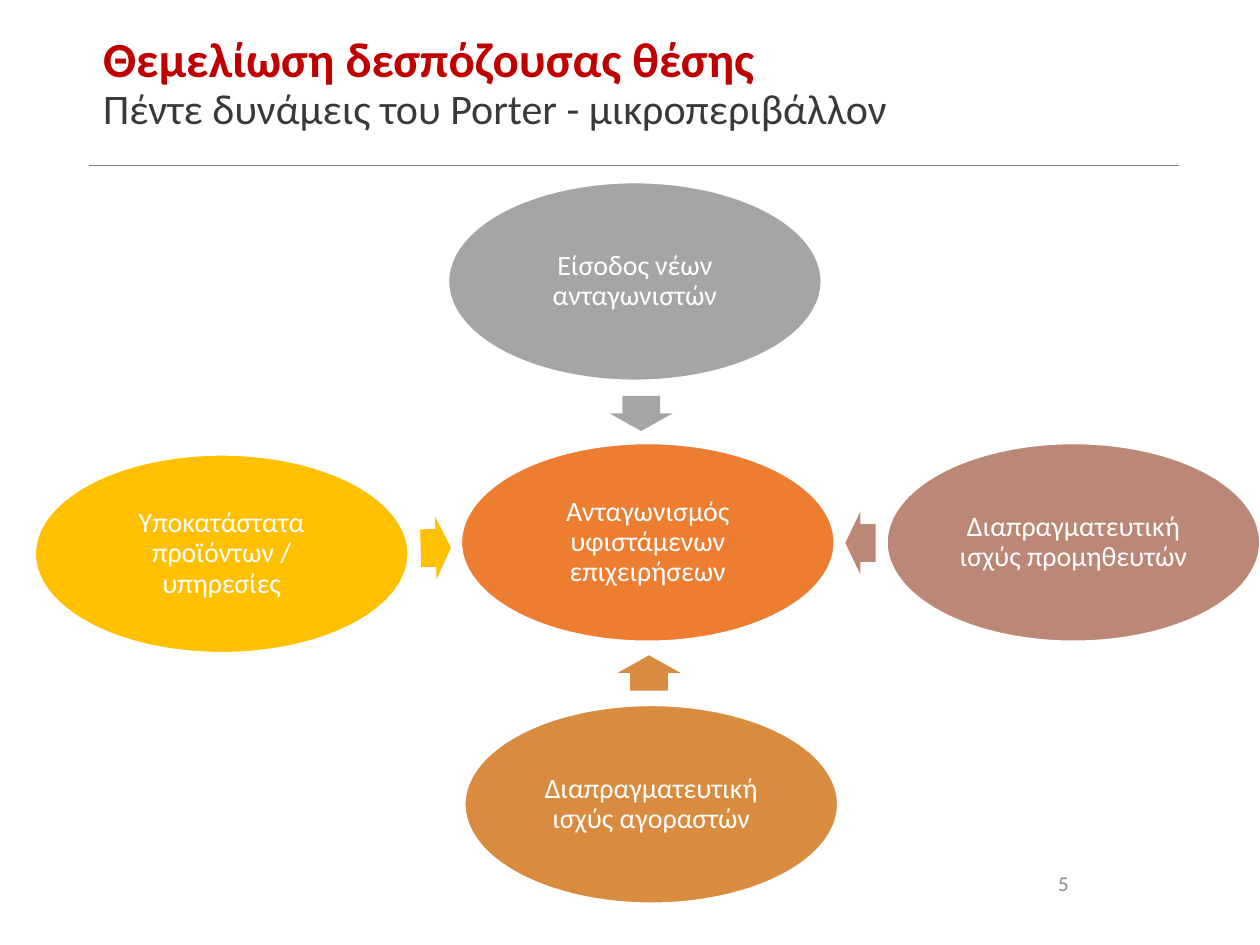
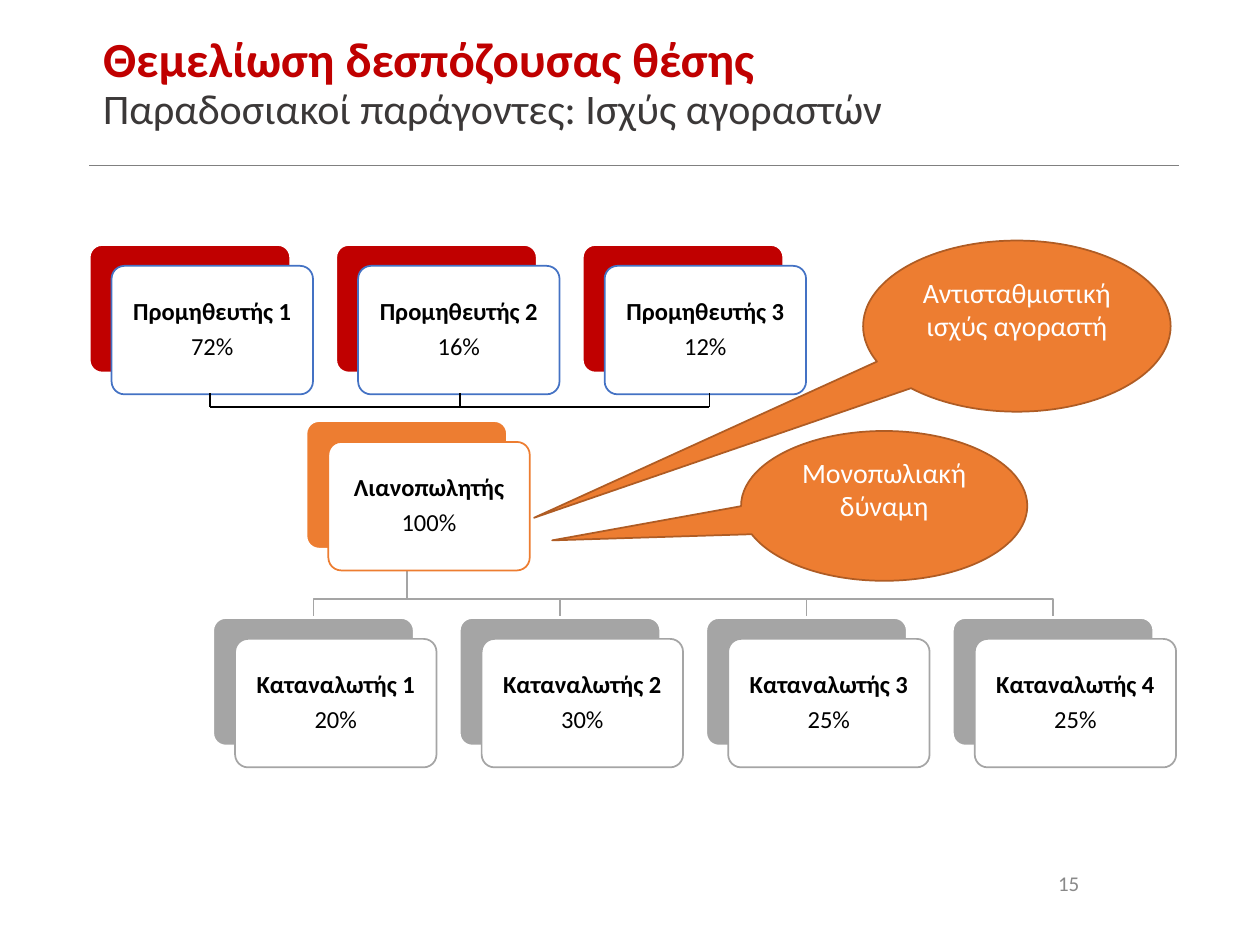
from dataclasses import dataclass
from typing import NamedTuple, Optional

from lxml.etree import SubElement
from pptx import Presentation
from pptx.dml.color import RGBColor
from pptx.enum.shapes import MSO_CONNECTOR as Connector, MSO_SHAPE as Preset
from pptx.enum.text import MSO_ANCHOR as Anchor, PP_ALIGN as Align
from pptx.oxml.ns import qn
from pptx.util import Cm, Pt


@dataclass(frozen=True)
class Theme:
    font: str = "Calibri"
    red: str = "C00000"
    dark: str = "3B3838"
    rule: str = "808080"
    number: str = "898989"
    white: str = "FFFFFF"
    black: str = "000000"
    orange: str = "ED7D31"
    orange_edge: str = "AF5C24"
    grey: str = "A5A5A5"
    blue: str = "4472C4"
    rose: str = "BB8776"
    amber: str = "D98C3F"
    yellow: str = "FFC000"
    title_size: int = 28
    subtitle_size: int = 24
    label_size: int = 16
    card_size: int = 14
    number_size: int = 12


THEME = Theme()


class Box(NamedTuple):
    """Left, top, width and height in centimetres."""
    left: float
    top: float
    width: float
    height: float

    @property
    def middle(self) -> float:
        return self.left + self.width / 2

    @property
    def bottom(self) -> float:
        return self.top + self.height


class Force(NamedTuple):
    label: str
    color: str
    left: float
    top: float
    arrow: Optional[Box] = None
    arrow_angle: float = 0


class Card(NamedTuple):
    name: str
    share: str


class CardRow(NamedTuple):
    left: float
    top: float
    back_color: str
    edge_color: str
    cards: list[Card]


class Callout(NamedTuple):
    label: str
    box: Box
    tip: tuple[float, float]


TITLE = "Θεμελίωση δεσπόζουσας θέσης"
TITLE_BOX = Box(1.83, 0.33, 21.89, 2.74)
NUMBER_BOX = Box(21.08, 17.3, 2.62, 1.02)

FORCE_WIDTH, FORCE_HEIGHT = 7.52, 3.99
FORCES = [
    Force("Ανταγωνισμός υφιστάμενων επιχειρήσεων", THEME.orange, 9.3, 8.94),
    Force("Είσοδος νέων ανταγωνιστών", THEME.grey, 9.04, 3.68,
          Box(12.57, 7.7, 0.71, 1.27), 90),
    Force("Διαπραγματευτική ισχύς προμηθευτών", THEME.rose, 17.88, 8.94,
          Box(17.04, 10.31, 0.61, 1.27), 180),
    Force("Διαπραγματευτική ισχύς αγοραστών", THEME.amber, 9.37, 14.22,
          Box(12.73, 12.93, 0.71, 1.27), 270),
    Force("Υποκατάστατα προϊόντων / υπηρεσίες", THEME.yellow, 0.71, 9.17,
          Box(8.48, 10.41, 0.61, 1.27), 358.6),
]

CARD_WIDTH, CARD_HEIGHT, CARD_STEP = 4.06, 2.59, 4.97
CARD_SHIFT_X, CARD_SHIFT_Y = 0.45, 0.43
SUPPLIERS = CardRow(1.8, 4.93, THEME.red, THEME.blue, [
    Card("Προμηθευτής 1", "72%"),
    Card("Προμηθευτής 2", "16%"),
    Card("Προμηθευτής 3", "12%"),
])
RETAILER = CardRow(6.17, 8.48, THEME.orange, THEME.orange,
                   [Card("Λιανοπωλητής", "100%")])
CONSUMERS = CardRow(4.29, 12.45, THEME.grey, THEME.grey, [
    Card("Καταναλωτής 1", "20%"),
    Card("Καταναλωτής 2", "30%"),
    Card("Καταναλωτής 3", "25%"),
    Card("Καταναλωτής 4", "25%"),
])
BRANCH_DROP = 0.38
BRACKET_Y, BRACKET_TOP = 8.2, 7.93
BRACKET_XS = [4.24 + 5.03 * index for index in range(3)]
CALLOUTS = [
    Callout("Μονοπωλιακή δύναμη", Box(14.94, 8.69, 5.77, 3.02), (-1.16, 0.23)),
    Callout("Αντισταθμιστική ισχύς αγοραστή", Box(17.4, 4.85, 6.2, 3.45), (-1.57, 1.12)),
]


def rgb(color: str) -> RGBColor:
    return RGBColor.from_string(color)


def emu(box: Box) -> list[Cm]:
    return [Cm(length) for length in box]


def write(paragraph, text: str, *, size: int, color: str, bold: bool = False,
          align=None, line_spacing: float = 1.0, space_before: float = 0) -> None:
    """Add a formatted run to a paragraph."""
    paragraph.alignment = align
    paragraph.line_spacing = line_spacing
    paragraph.space_before = Pt(space_before)
    run = paragraph.add_run()
    run.text = text
    run.font.name = THEME.font
    run.font.size = Pt(size)
    run.font.bold = bold
    run.font.color.rgb = rgb(color)


def set_frame(frame, inset: Optional[float] = None) -> None:
    """Wrap and centre a text frame vertically, with equal insets if given."""
    frame.word_wrap = True
    frame.vertical_anchor = Anchor.MIDDLE
    if inset is not None:
        frame.margin_left = frame.margin_right = Cm(inset)
        frame.margin_top = frame.margin_bottom = Cm(inset)


def add_text_box(slide, box: Box):
    frame = slide.shapes.add_textbox(*emu(box)).text_frame
    set_frame(frame)
    return frame.paragraphs[0]


def add_preset(slide, preset, box: Box, fill: str, *, edge: Optional[str] = None,
               edge_width: float = 1, adjustments: tuple[float, ...] = ()):
    shape = slide.shapes.add_shape(preset, *emu(box))
    shape.shadow.inherit = False
    shape.fill.solid()
    shape.fill.fore_color.rgb = rgb(fill)
    if edge is None:
        shape.line.fill.background()
    else:
        shape.line.color.rgb = rgb(edge)
        shape.line.width = Pt(edge_width)
    for index, value in enumerate(adjustments):
        shape.adjustments[index] = value
    return shape


def add_line(slide, start: tuple[float, float], end: tuple[float, float],
             color: str, width: float = 1) -> None:
    points = [Cm(value) for value in (*start, *end)]
    line = slide.shapes.add_connector(Connector.STRAIGHT, *points)
    line.line.color.rgb = rgb(color)
    line.line.width = Pt(width)
    SubElement(line._element.spPr, qn("a:effectLst"))


def add_branch(slide, points: list[tuple[float, float]], color: str) -> None:
    """Draw an open, unfilled line through the points."""
    start, *rest = [(Cm(x), Cm(y)) for x, y in points]
    builder = slide.shapes.build_freeform(*start)
    builder.add_line_segments(rest, close=False)
    branch = builder.convert_to_shape()
    branch.shadow.inherit = False
    branch.fill.background()
    branch.line.color.rgb = rgb(color)
    branch.line.width = Pt(1)


def add_base_slide(presentation, subtitle: str, number: int):
    """Add a slide with the shared title, rule and page number."""
    slide = presentation.slides.add_slide(presentation.slide_layouts[6])
    add_line(slide, (1.8, 3.33), (23.77, 3.33), THEME.rule, 0.75)
    title = add_text_box(slide, TITLE_BOX)
    write(title, TITLE, size=THEME.title_size, color=THEME.red, bold=True, line_spacing=0.9)
    title.add_line_break()
    write(title, subtitle, size=THEME.subtitle_size, color=THEME.dark, line_spacing=0.9)
    write(add_text_box(slide, NUMBER_BOX), str(number),
          size=THEME.number_size, color=THEME.number)
    return slide


def add_force(slide, force: Force) -> None:
    if force.arrow:
        arrow = add_preset(slide, Preset.RIGHT_ARROW, force.arrow, force.color,
                           adjustments=(0.6, 0.5))
        arrow.rotation = force.arrow_angle
    box = Box(force.left, force.top, FORCE_WIDTH, FORCE_HEIGHT)
    ellipse = add_preset(slide, Preset.OVAL, box, force.color, edge=THEME.white)
    set_frame(ellipse.text_frame, 0.05)
    write(ellipse.text_frame.paragraphs[0], force.label, size=THEME.label_size,
          color=THEME.white, align=Align.CENTER, line_spacing=0.9)


def card_boxes(row: CardRow) -> list[Box]:
    """Back plates of a row, at equal steps."""
    return [Box(row.left + CARD_STEP * index, row.top, CARD_WIDTH, CARD_HEIGHT)
            for index in range(len(row.cards))]


def add_card_row(slide, row: CardRow) -> None:
    for card, back in zip(row.cards, card_boxes(row)):
        front = back._replace(left=back.left + CARD_SHIFT_X, top=back.top + CARD_SHIFT_Y)
        add_preset(slide, Preset.ROUNDED_RECTANGLE, back, row.back_color,
                   edge=THEME.white, edge_width=1.5, adjustments=(0.1,))
        plate = add_preset(slide, Preset.ROUNDED_RECTANGLE, front, THEME.white,
                           edge=row.edge_color, adjustments=(0.1,))
        frame = plate.text_frame
        set_frame(frame, 0.23)
        style = dict(size=THEME.card_size, color=THEME.black,
                     align=Align.CENTER, line_spacing=0.9)
        write(frame.paragraphs[0], card.name, bold=True, **style)
        write(frame.add_paragraph(), card.share, space_before=5, **style)


def add_callout(slide, callout: Callout) -> None:
    shape = add_preset(slide, Preset.OVAL_CALLOUT, callout.box, THEME.orange,
                       edge=THEME.orange_edge, adjustments=callout.tip)
    set_frame(shape.text_frame)
    shape.text_frame.margin_bottom = Cm(0.82)
    write(shape.text_frame.paragraphs[0], callout.label, size=THEME.label_size,
          color=THEME.white, align=Align.CENTER)


def add_five_forces_slide(presentation) -> None:
    slide = add_base_slide(presentation, "Πέντε δυνάμεις του Porter - μικροπεριβάλλον", 5)
    for force in FORCES:
        add_force(slide, force)


def add_buyer_power_slide(presentation) -> None:
    slide = add_base_slide(presentation, "Παραδοσιακοί παράγοντες: Ισχύς αγοραστών", 15)
    retailer = card_boxes(RETAILER)[0]
    for consumer in card_boxes(CONSUMERS):
        bend = consumer.top - BRANCH_DROP
        add_branch(slide, [(retailer.middle, retailer.bottom), (retailer.middle, bend),
                           (consumer.middle, bend), (consumer.middle, consumer.top)],
                   THEME.grey)
    for row in (SUPPLIERS, RETAILER, CONSUMERS):
        add_card_row(slide, row)
    add_line(slide, (BRACKET_XS[0], BRACKET_Y), (BRACKET_XS[-1], BRACKET_Y), THEME.black)
    for x in BRACKET_XS:
        add_line(slide, (x, BRACKET_Y), (x, BRACKET_TOP), THEME.black)
    for callout in CALLOUTS:
        add_callout(slide, callout)


def main() -> None:
    presentation = Presentation()
    presentation.slide_width, presentation.slide_height = Cm(25.4), Cm(19.05)
    add_five_forces_slide(presentation)
    add_buyer_power_slide(presentation)
    presentation.save("out.pptx")


if __name__ == "__main__":
    main()
